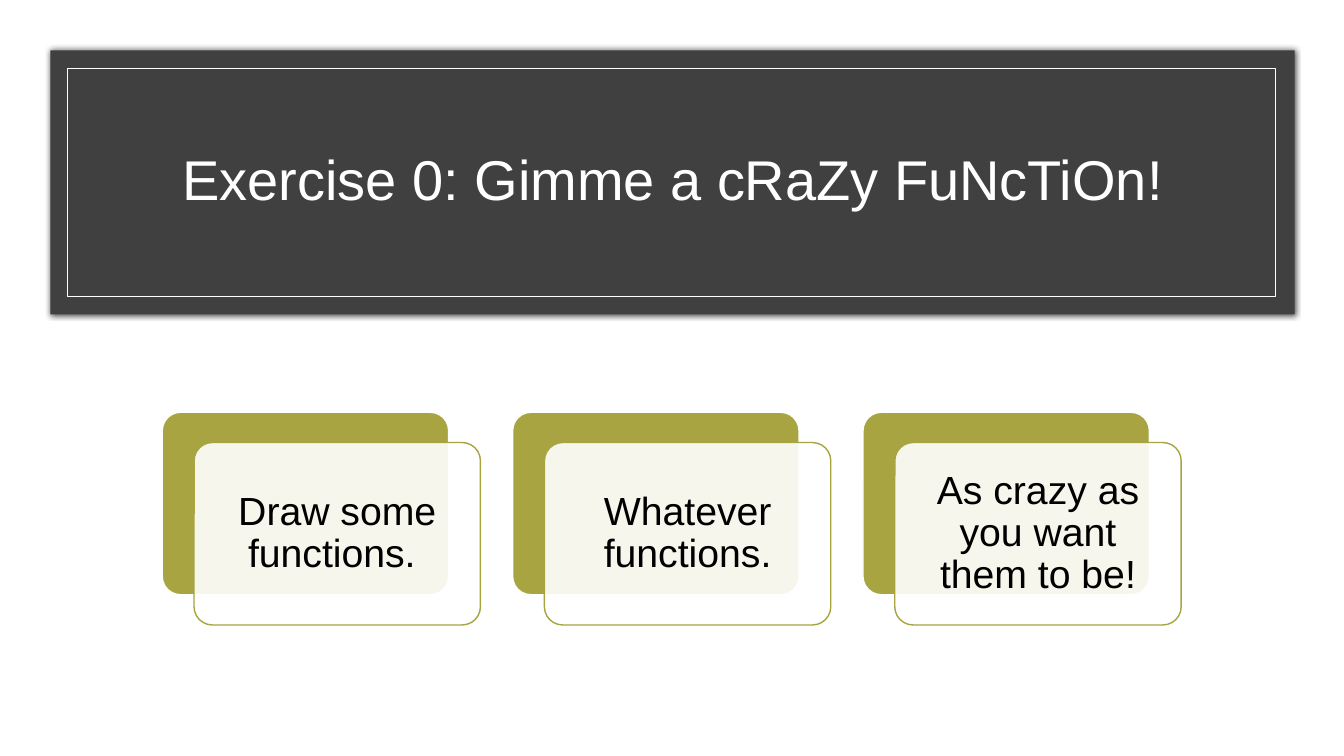
from lxml.etree import SubElement
from pptx import Presentation
from pptx.dml.color import RGBColor
from pptx.enum.shapes import MSO_SHAPE
from pptx.enum.text import MSO_ANCHOR, PP_ALIGN
from pptx.oxml import parse_xml
from pptx.oxml.ns import nsdecls, qn
from pptx.util import Inches, Pt

# Content
TITLE = "Exercise 0: Gimme a cRaZy FuNcTiOn!"
CARDS = [
    "Draw some functions. ",
    "Whatever functions.",
    "As crazy as you want them to be!",
]

# Style
FONT = "Arial"
WHITE = RGBColor(0xFF, 0xFF, 0xFF)
BLACK = RGBColor(0x00, 0x00, 0x00)
CHARCOAL = RGBColor(0x40, 0x40, 0x40)
OLIVE = RGBColor(0xA7, 0xA4, 0x41)

# Layout, in inches
CARD_LEFT, CARD_TOP = 1.61, 4.09
CARD_WIDTH, CARD_HEIGHT = 2.84, 1.81
CARD_PITCH = 3.475
FRONT_SHIFT_X, FRONT_SHIFT_Y = 0.315, 0.3
CARD_INSET = 0.12


def add_panel(page, kind, left, top, width, height, fill=None, line=None, line_width=1):
    panel = page.shapes.add_shape(
        kind, Inches(left), Inches(top), Inches(width), Inches(height))
    panel.shadow.inherit = False
    if fill is None:
        panel.fill.background()
    else:
        panel.fill.solid()
        panel.fill.fore_color.rgb = fill
    if line is None:
        panel.line.fill.background()
    else:
        panel.line.color.rgb = line
        panel.line.width = Pt(line_width)
    return panel


def set_text(shape, text, size, color, inset):
    frame = shape.text_frame
    frame.text = text
    frame.word_wrap = True
    frame.vertical_anchor = MSO_ANCHOR.MIDDLE
    frame.margin_left = frame.margin_right = Inches(inset)
    frame.margin_top = frame.margin_bottom = Inches(inset)
    para = frame.paragraphs[0]
    para.alignment = PP_ALIGN.CENTER
    para.line_spacing = 0.9
    span = para.runs[0]
    span.font.name = FONT
    span.font.size = Pt(size)
    span.font.color.rgb = color


def add_glow_shadow(shape):
    effects = shape.element.spPr.find(qn("a:effectLst"))
    effects.append(parse_xml(
        f'<a:outerShdw {nsdecls("a")} blurRad="{Pt(4)}" dist="0" dir="0">'
        '<a:srgbClr val="000000"><a:alpha val="66000"/></a:srgbClr></a:outerShdw>'))


def set_opacity(shape, percent):
    color = shape.element.spPr.find(qn("a:solidFill")).find(qn("a:srgbClr"))
    SubElement(color, qn("a:alpha")).set("val", str(percent * 1000))


def add_card(page, index, text):
    left = CARD_LEFT + index * CARD_PITCH
    add_panel(page, MSO_SHAPE.ROUNDED_RECTANGLE, left, CARD_TOP,
              CARD_WIDTH, CARD_HEIGHT, OLIVE, WHITE).adjustments[0] = 0.1
    front = add_panel(page, MSO_SHAPE.ROUNDED_RECTANGLE,
                      left + FRONT_SHIFT_X, CARD_TOP + FRONT_SHIFT_Y,
                      CARD_WIDTH, CARD_HEIGHT, WHITE, OLIVE)
    front.adjustments[0] = 0.1
    set_opacity(front, 90)
    set_text(front, text, 28, BLACK, CARD_INSET)


def main():
    deck = Presentation()
    deck.slide_width, deck.slide_height = Inches(13.33), Inches(7.5)
    page = deck.slides.add_slide(deck.slide_layouts[5])
    page.background.fill.solid()
    page.background.fill.fore_color.rgb = WHITE

    # Title banner with its inner frame
    banner = add_panel(page, MSO_SHAPE.RECTANGLE, 0.5, 0.5, 12.34, 2.62, CHARCOAL)
    add_glow_shadow(banner)
    frame = add_panel(page, MSO_SHAPE.RECTANGLE, 0.67, 0.68, 11.98, 2.26,
                      line=WHITE, line_width=0.5)

    # Title, raised in front of the banner
    title = page.shapes.title
    title.left, title.top = Inches(1.17), Inches(1.06)
    title.width, title.height = Inches(11), Inches(1.5)
    set_text(title, TITLE, 40, WHITE, 0.05)
    frame.element.addnext(title.element)

    # Row of layered cards
    for index, text in enumerate(CARDS):
        add_card(page, index, text)

    deck.save("out.pptx")


if __name__ == "__main__":
    main()
